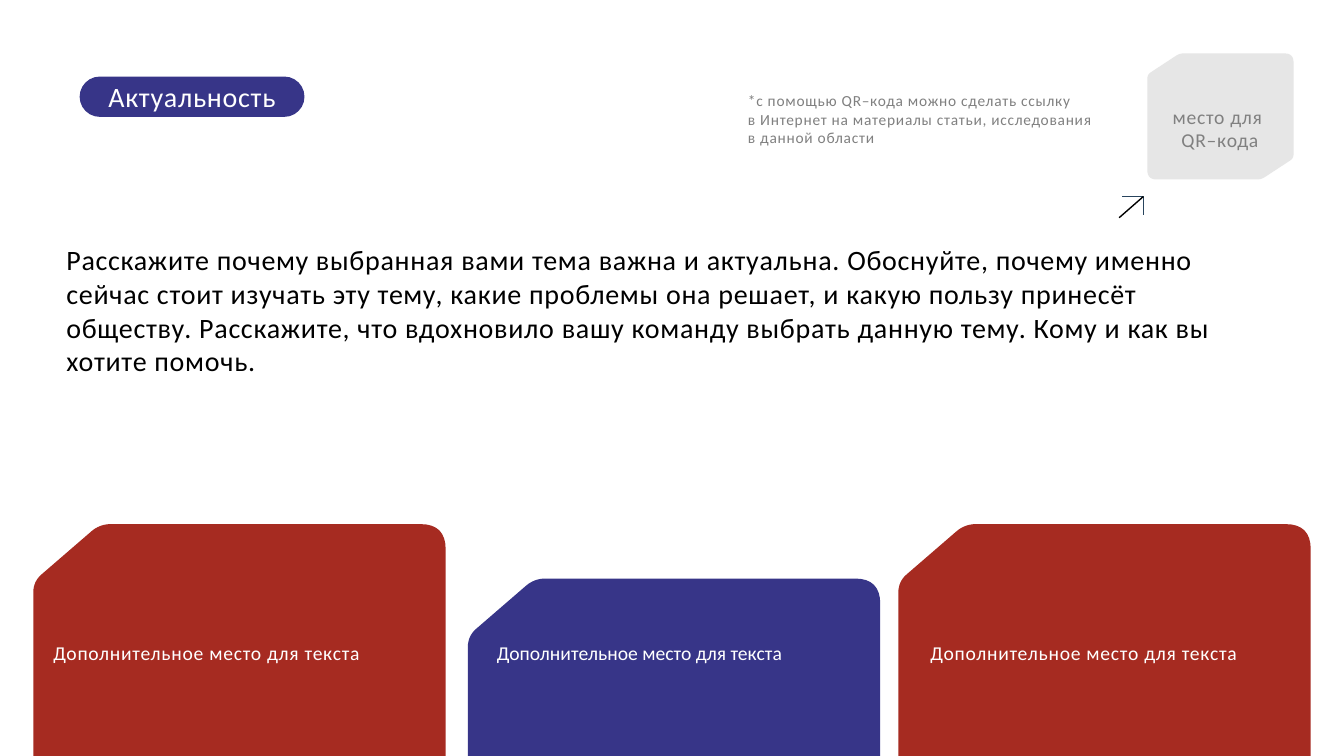
from math import hypot

from lxml.etree import SubElement
from pptx import Presentation
from pptx.dml.color import RGBColor
from pptx.enum.shapes import MSO_CONNECTOR as Connector, MSO_SHAPE as Preset
from pptx.enum.text import MSO_ANCHOR as Anchor, MSO_AUTO_SIZE as AutoSize, PP_ALIGN as Align
from pptx.oxml.ns import qn
from pptx.util import Inches, Pt

WIDTH, HEIGHT = 13.33, 7.5
FONT = "Calibri"
BLUE, RED, PALE, GREY = "373588", "A62B21", "E6E6E6", "808080"
WHITE, BLACK, TEAL = "FFFFFF", "000000", "28445D"

HEADING = "Актуальность"
BODY = [
    "Расскажите почему выбранная вами тема важна и актуальна. Обоснуйте, почему именно "
    "сейчас стоит изучать эту тему, какие проблемы она решает, и какую пользу принесёт "
    "обществу. Расскажите, что вдохновило вашу команду выбрать данную тему. Кому и как вы "
    "хотите помочь."
]
FOOTNOTE = [
    "*с помощью QR–кода можно сделать ссылку",
    "в Интернет на материалы статьи, исследования",
    "в данной области",
]
CODE_PLACE = ["место для ", "QR–кода"]
CARD_TEXT = "Дополнительное место для текста"
CARD_WIDTH, CAPTION_TOP = 4.09, 6.31
CARDS = [  # left, top, fill, caption left, caption width, letter spacing
    (4.64, 5.74, BLUE, 4.83, 3.71, 0),
    (0.33, 5.2, RED, 0.43, 3.89, 0.5),
    (8.91, 5.2, RED, 9.13, 3.89, 0.5),
]


def color(value):
    return RGBColor.from_string(value)


def inches(*lengths):
    return [Inches(length) for length in lengths]


def flatten(element):
    """Switch off the theme shadow."""
    SubElement(element.spPr, qn("a:effectLst"))


def write(frame, lines, size, ink, align=Align.LEFT, spacing=0.5):
    frame.word_wrap = True
    for index, line in enumerate(lines):
        paragraph = frame.add_paragraph() if index else frame.paragraphs[0]
        paragraph.alignment = align
        run = paragraph.add_run()
        run.text = line
        run.font.name, run.font.size = FONT, Pt(size)
        run.font.color.rgb = color(ink)
        if spacing:
            run.font._element.set("spc", str(int(spacing * 100)))


def add_text(shapes, box, *content, **style):
    frame = shapes.add_textbox(*inches(*box)).text_frame
    write(frame, *content, **style)
    frame.auto_size = AutoSize.SHAPE_TO_FIT_TEXT


def rounded_outline(corners, steps=8):
    """Round each (x, y, radius) corner with a quadratic curve."""
    outline = []
    for index, (x, y, radius) in enumerate(corners):
        ends = []
        for nx, ny, _ in (corners[index - 1], corners[(index + 1) % len(corners)]):
            share = radius / hypot(nx - x, ny - y)
            ends.append((x + (nx - x) * share, y + (ny - y) * share))
        (ax, ay), (bx, by) = ends
        for step in range(steps + 1 if radius else 1):
            t = step / steps
            outline.append((
                (1 - t) ** 2 * ax + 2 * t * (1 - t) * x + t * t * bx,
                (1 - t) ** 2 * ay + 2 * t * (1 - t) * y + t * t * by,
            ))
    return outline


def add_outline(shapes, left, top, points, close=True):
    points = [inches(left + x, top + y) for x, y in points]
    builder = shapes.build_freeform(*points[0])
    builder.add_line_segments(points[1:], close=close)
    shape = builder.convert_to_shape()
    shape.shadow.inherit = False
    return shape


def paint(shape, fill):
    shape.fill.solid()
    shape.fill.fore_color.rgb = color(fill)
    shape.line.fill.background()


def add_code_place(shapes):
    w, h, cut_x, cut_y = 1.45, 1.25, 0.32, 0.21
    corners = [(0, cut_y, 0.04), (cut_x, 0, 0.04), (w, 0, 0.09)]
    corners += [(w - x, h - y, radius) for x, y, radius in corners]
    paint(add_outline(shapes, 11.38, 0.53, rounded_outline(corners)), PALE)
    add_text(shapes, (11.27, 0.99, 1.66, 0.57), CODE_PLACE, 14, GREY, align=Align.CENTER)


def add_heading(shapes):
    pill = shapes.add_shape(Preset.ROUNDED_RECTANGLE, *inches(0.79, 0.76, 2.23, 0.4))
    pill.adjustments[0] = 0.5
    pill.shadow.inherit = False
    paint(pill, BLUE)
    pill.text_frame.vertical_anchor = Anchor.MIDDLE
    write(pill.text_frame, [HEADING], 20, WHITE, align=Align.CENTER)


def add_arrow(shapes):
    arrow = shapes.add_group_shape().shapes
    head = add_outline(arrow, 11.13, 1.95, [(0, 0), (0.21, 0), (0.21, 0.18)], close=False)
    head.fill.background()
    shaft = arrow.add_connector(Connector.STRAIGHT, *inches(11.1, 2.16, 11.34, 1.95))
    flatten(shaft._element)
    for part, ink in ((head, TEAL), (shaft, BLACK)):
        part.line.color.rgb = color(ink)
        part.line.width = Pt(1)


def add_card(shapes, left, top, fill):
    """Draw a card with a cut corner that runs to the slide's bottom edge."""
    depth = HEIGHT - top
    corners = [(0, 0.57, 0.11), (0.66, 0, 0.11), (CARD_WIDTH, 0, 0.25),
               (CARD_WIDTH, depth, 0), (0, depth, 0)]
    paint(add_outline(shapes, left, top, rounded_outline(corners)), fill)


def main():
    deck = Presentation()
    deck.slide_width, deck.slide_height = inches(WIDTH, HEIGHT)
    shapes = deck.slides.add_slide(deck.slide_layouts[6]).shapes
    add_text(shapes, (0.56, 2.36, 11.97, 1.45), BODY, 20, BLACK)
    add_text(shapes, (7.32, 0.86, 3.9, 0.66), FOOTNOTE, 11, GREY)
    add_code_place(shapes)
    add_heading(shapes)
    add_arrow(shapes)
    for left, top, fill, *_ in CARDS:
        add_card(shapes, left, top, fill)
    for *_, left, width, spacing in CARDS:
        add_text(shapes, (left, CAPTION_TOP, width, 0.34), [CARD_TEXT], 14, WHITE, spacing=spacing)
    deck.save("out.pptx")


if __name__ == "__main__":
    main()
